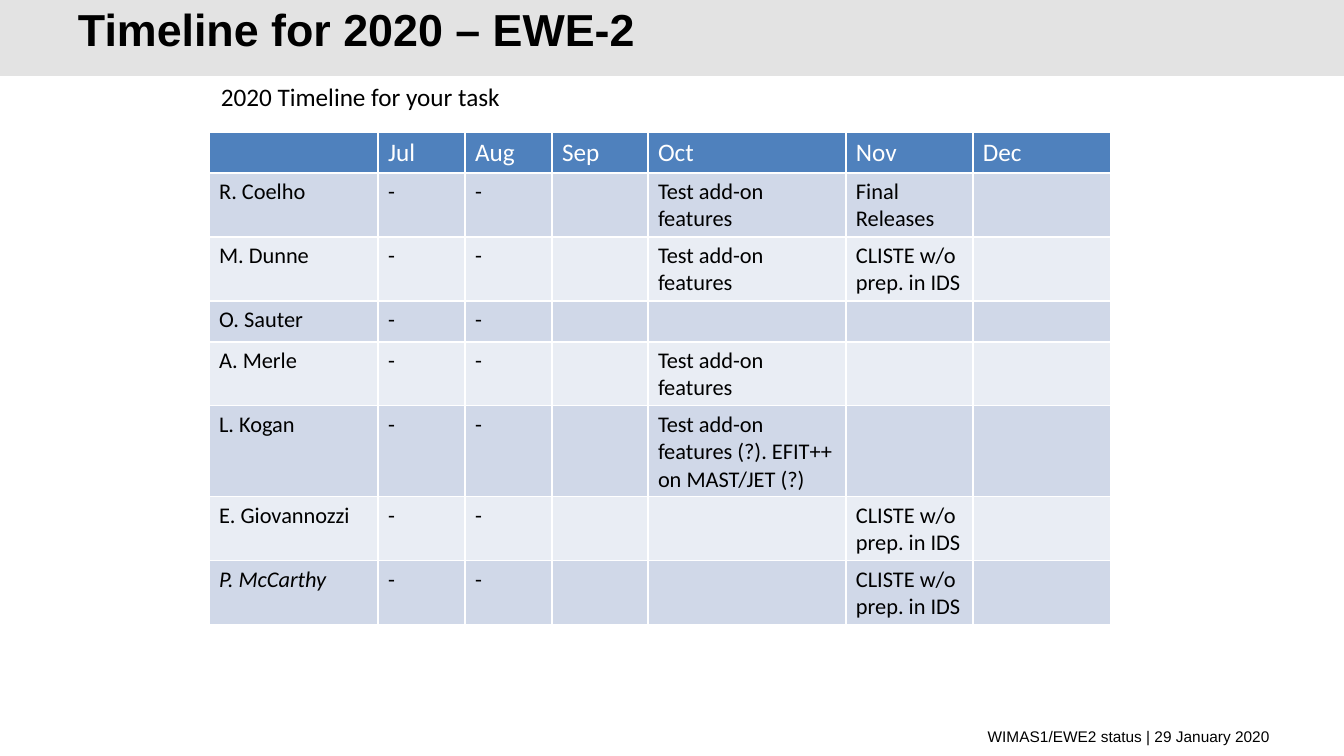
"""Build the 2020 timeline slide for task EWE-2."""
from lxml.etree import SubElement
from pptx import Presentation
from pptx.dml.color import RGBColor
from pptx.enum.shapes import MSO_SHAPE
from pptx.enum.text import MSO_ANCHOR, PP_ALIGN
from pptx.oxml.ns import qn
from pptx.util import Pt

TITLE = "Timeline for 2020 – EWE-2"
LEAD = "2020 Timeline for your task"
FOOT = "WIMAS1/EWE2 status | 29 January 2020"
MONTHS = ["Jul", "Aug", "Sep", "Oct", "Nov", "Dec"]
TEST = "Test add-on features"
PREP = "CLISTE w/o prep. in IDS"
PEOPLE = [
    ("R. Coelho", TEST, "Final Releases"),
    ("M. Dunne", TEST, PREP),
    ("O. Sauter", "", ""),
    ("A. Merle", TEST, ""),
    ("L. Kogan", TEST + " (?). EFIT++ on MAST/JET (?)", ""),
    ("E. Giovannozzi", "", PREP),
    ("P. McCarthy", "", PREP),
]
SLANTED = "P. McCarthy"
WIDTHS = [169, 87, 87, 96, 198, 127, 138]
HEIGHTS = [41, 64, 64, 41, 64, 91, 64, 64]
HEAD, BANDS = "4F81BD", ("D0D8E8", "E9EDF4")
BLACK, WHITE, GREY = "000000", "FFFFFF", "E3E3E3"
EDGES = ("a:lnL", "a:lnR", "a:lnT", "a:lnB")


def px(n):
    return round(n * 914400 / 100.8)


def paint(fill, color):
    fill.solid()
    fill.fore_color.rgb = RGBColor.from_string(color)


def style(font, size, face, color=BLACK):
    font.size, font.name = Pt(size), face
    font.color.rgb = RGBColor.from_string(color)


def write(slide, box, text, size, face, anchor=MSO_ANCHOR.MIDDLE):
    frame = slide.shapes.add_textbox(*map(px, box)).text_frame
    frame.word_wrap = True
    frame.vertical_anchor = anchor
    frame.text = text
    line = frame.paragraphs[0]
    style(line.runs[0].font, size, face)
    return line


def outline(cell):
    props = cell._tc.get_or_add_tcPr()
    for spot, tag in enumerate(EDGES):
        edge = props.makeelement(qn(tag), {"w": str(Pt(1))})
        fill = SubElement(edge, qn("a:solidFill"))
        SubElement(fill, qn("a:srgbClr"), val=WHITE)
        props.insert(spot, edge)


def draw_table(slide):
    rows = [["", *MONTHS]]
    rows += [[name, "-", "-", "", oct, nov, ""] for name, oct, nov in PEOPLE]
    box = (209, 132, sum(WIDTHS), sum(HEIGHTS))
    grid = slide.shapes.add_table(len(rows), len(WIDTHS), *map(px, box)).table
    for col, width in zip(grid.columns, WIDTHS):
        col.width = px(width)
    for r, (row, height) in enumerate(zip(rows, HEIGHTS)):
        grid.rows[r].height = px(height)
        back = BANDS[(r - 1) % 2] if r else HEAD
        size, color = (16, BLACK) if r else (18, WHITE)
        for c, text in enumerate(row):
            cell = grid.cell(r, c)
            cell.text = text
            font = cell.text_frame.paragraphs[0].font
            for run in cell.text_frame.paragraphs[0].runs:
                font = run.font
            style(font, size, "Calibri", color)
            font.bold = False
            font.italic = text == SLANTED
            paint(cell.fill, back)
            outline(cell)


def main():
    deck = Presentation()
    deck.slide_width, deck.slide_height = px(1344), px(756)
    slide = deck.slides.add_slide(deck.slide_layouts[6])
    band = slide.shapes.add_shape(MSO_SHAPE.RECTANGLE, 0, 0, px(1344), px(76))
    band.shadow.inherit = False
    paint(band.fill, GREY)
    band.line.fill.background()
    title = write(slide, (68, 8, 1109, 50), TITLE, 32, "Arial")
    title.line_spacing = Pt(32)
    title.runs[0].font.bold = True
    write(slide, (211, 76, 746, 40), LEAD, 18, "Calibri", MSO_ANCHOR.TOP)
    draw_table(slide)
    foot = write(slide, (68, 722, 1212, 29), FOOT, 11, "Arial")
    foot.alignment = PP_ALIGN.RIGHT
    deck.save("out.pptx")


if __name__ == "__main__":
    main()
